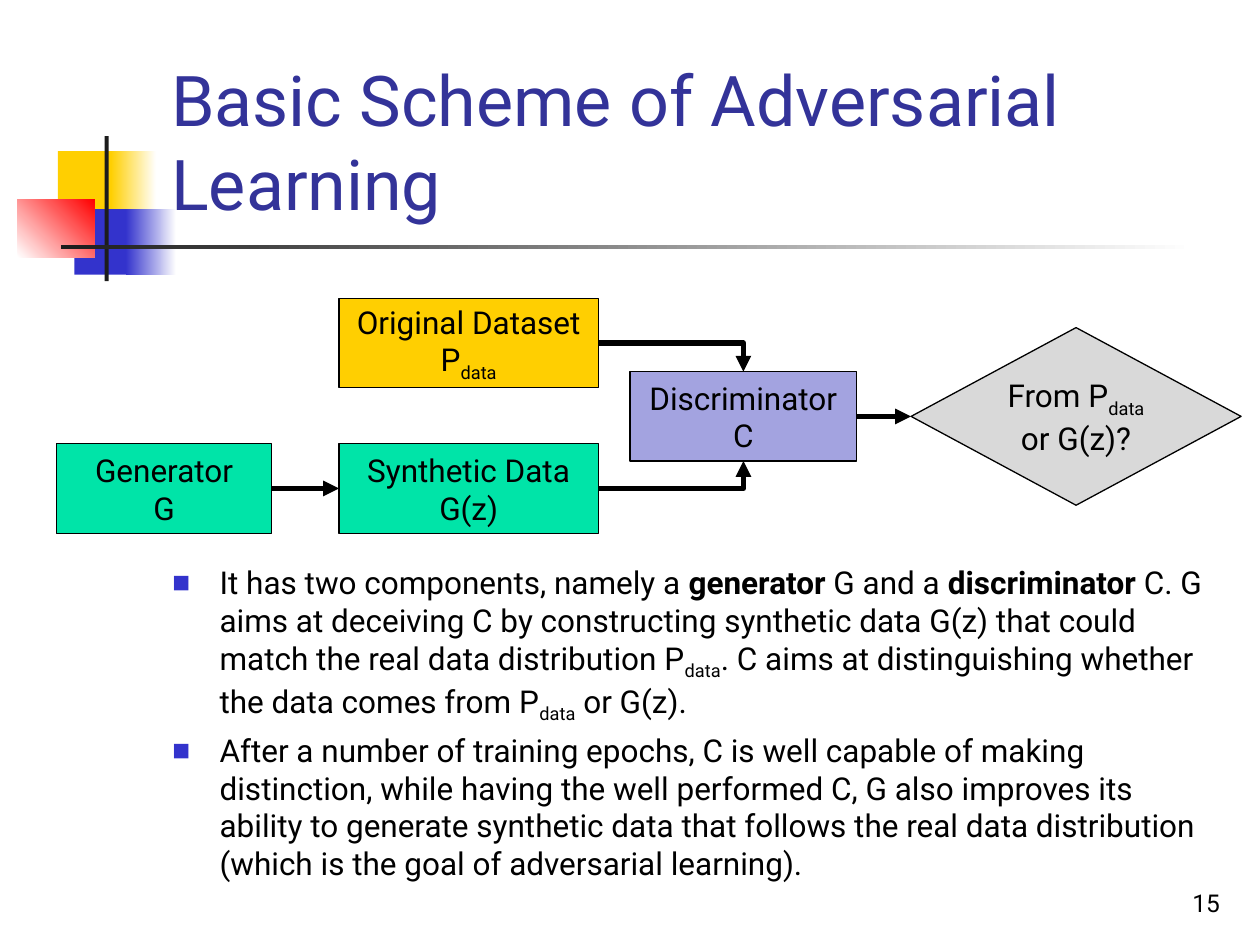
from dataclasses import dataclass
from typing import NamedTuple

from lxml.etree import SubElement
from pptx import Presentation
from pptx.dml.color import RGBColor
from pptx.enum.shapes import MSO_CONNECTOR, MSO_SHAPE
from pptx.enum.text import MSO_ANCHOR, MSO_AUTO_SIZE, PP_ALIGN
from pptx.oxml.ns import qn
from pptx.util import Pt

FONT = "Roboto"
COLORS = {
    "yellow": "FFCF01",
    "blue": "3333CC",
    "red": "FF0000",
    "white": "FFFFFF",
    "dark": "1C1C1C",
    "title": "333399",
    "black": "000000",
    "green": "00E4A8",
    "lavender": "A3A3E0",
    "gray": "D9D9D9",
}
TOP, LEFT, BOTTOM, RIGHT = range(4)


class Box(NamedTuple):
    left: float
    top: float
    width: float
    height: float


class Span(NamedTuple):
    text: str
    bold: bool = False
    subscript: bool = False


@dataclass
class Ornament:
    box: Box
    color: str
    end_color: str = ""
    angle: float = 0


@dataclass
class Node:
    name: str
    box: Box
    color: str
    lines: list[list[Span]]
    kind: MSO_SHAPE = MSO_SHAPE.RECTANGLE


@dataclass
class Arrow:
    source: str
    source_side: int
    target: str
    target_side: int
    bent: bool = False


DATA = Span("data", subscript=True)
ORNAMENTS = [
    Ornament(Box(33.1, 86.4, 34.6, 37.4), "yellow"),
    Ornament(Box(63.4, 86.4, 25.9, 37.4), "yellow", "white"),
    Ornament(Box(42.5, 119.5, 33.1, 37.4), "blue"),
    Ornament(Box(72, 119.5, 28.8, 37.4), "blue", "white"),
    Ornament(Box(10.1, 113.8, 43.9, 33.1), "white", "red", 45),
    Ornament(Box(59.8, 77.8, 2.3, 82.8), "dark"),
    Ornament(Box(34.6, 140.2, 648, 2.3), "dark", "white"),
]
NODES = [
    Node("dataset", Box(193.7, 170.4, 148.3, 51.1), "yellow",
         [[Span("Original Dataset")], [Span("P"), DATA]]),
    Node("generator", Box(32.4, 253.6, 122.8, 51.1), "green",
         [[Span("Generator")], [Span("G")]]),
    Node("synthetic", Box(193.7, 253.6, 148.3, 51.1), "green",
         [[Span("Synthetic Data")], [Span("G(z)")]]),
    Node("discriminator", Box(360, 212.4, 129.6, 51.1), "lavender",
         [[Span("Discriminator")], [Span("C")]]),
    Node("decision", Box(520.6, 187.2, 188.6, 101.5), "gray",
         [[Span("From P"), DATA, Span(" or G(z)?")]], MSO_SHAPE.DIAMOND),
]
ARROWS = [
    Arrow("generator", RIGHT, "synthetic", LEFT),
    Arrow("dataset", RIGHT, "discriminator", TOP, bent=True),
    Arrow("synthetic", RIGHT, "discriminator", BOTTOM, bent=True),
    Arrow("discriminator", RIGHT, "decision", LEFT),
]
BULLETS = [
    [
        Span("It has two components, namely a "),
        Span("generator", bold=True),
        Span(" G and a "),
        Span("discriminator", bold=True),
        Span(" C. G aims at deceiving C by constructing synthetic data G(z) "
             "that could match the real data distribution P"),
        DATA,
        Span(". C aims at distinguishing whether the data comes from P"),
        DATA,
        Span(" or G(z)."),
    ],
    [
        Span("After a number of training epochs, C is well capable of making "
             "distinction, while having the well performed C, G also improves its "
             "ability to generate synthetic data that follows the real data "
             "distribution (which is the goal of adversarial learning)."),
    ],
]


def rgb(name: str) -> RGBColor:
    return RGBColor.from_string(COLORS[name])


def lengths(box: Box) -> list[Pt]:
    return [Pt(value) for value in box]


def format_paragraph(paragraph, size: float, alignment=PP_ALIGN.LEFT, color: str = "black") -> None:
    paragraph.alignment = alignment
    paragraph.font.name = FONT
    paragraph.font.size = Pt(size)
    paragraph.font.color.rgb = rgb(color)


def add_spans(paragraph, spans: list[Span]) -> None:
    for span in spans:
        run = paragraph.add_run()
        run.text = span.text
        if span.bold:
            run.font.bold = True
        if span.subscript:
            run._r.get_or_add_rPr().set("baseline", "-25000")


def add_title(slide):
    title = slide.shapes.title
    title.left, title.top, title.width, title.height = lengths(Box(90.7, 16.6, 613.4, 115.2))
    frame = title.text_frame
    frame.text = "Basic Scheme of Adversarial Learning"
    frame.word_wrap = True
    frame.auto_size = MSO_AUTO_SIZE.NONE
    frame.vertical_anchor = MSO_ANCHOR.BOTTOM
    format_paragraph(frame.paragraphs[0], 40, color="title")
    return title


def add_ornament(slide, ornament: Ornament, title) -> None:
    shape = slide.shapes.add_shape(MSO_SHAPE.RECTANGLE, *lengths(ornament.box))
    shape.shadow.inherit = False
    shape.line.fill.background()
    if ornament.end_color:
        shape.fill.gradient()
        shape.fill.gradient_angle = ornament.angle
        for stop, color in zip(shape.fill.gradient_stops, (ornament.color, ornament.end_color)):
            stop.color.rgb = rgb(color)
    else:
        shape.fill.solid()
        shape.fill.fore_color.rgb = rgb(ornament.color)
    title.element.addprevious(shape.element)


def add_text_box(slide, box: Box, anchor=MSO_ANCHOR.TOP):
    frame = slide.shapes.add_textbox(*lengths(box)).text_frame
    frame.word_wrap = True
    frame.vertical_anchor = anchor
    return frame


def add_bullets(slide) -> None:
    frame = add_text_box(slide, Box(91.4, 318.2, 613.4, 190.1))
    for index, spans in enumerate(BULLETS):
        paragraph = frame.add_paragraph() if index else frame.paragraphs[0]
        format_paragraph(paragraph, 18)
        paragraph.space_before = Pt(3.6)
        properties = paragraph._p.get_or_add_pPr()
        properties.set("marL", str(Pt(27)))
        properties.set("indent", str(Pt(-27)))
        marker = [("buClr", {}), ("buSzPct", {"val": "60000"}),
                  ("buFont", {"typeface": FONT}), ("buChar", {"char": "■"})]
        elements = [properties.makeelement(qn(f"a:{tag}"), values) for tag, values in marker]
        SubElement(elements[0], qn("a:srgbClr"), val=COLORS["blue"])
        default_run = properties.find(qn("a:defRPr"))
        for element in elements:
            default_run.addprevious(element)
        add_spans(paragraph, spans)


def add_node(slide, node: Node):
    shape = slide.shapes.add_shape(node.kind, *lengths(node.box))
    shape.shadow.inherit = False
    shape.fill.solid()
    shape.fill.fore_color.rgb = rgb(node.color)
    shape.line.color.rgb = rgb("black")
    shape.line.width = Pt(0.75)
    frame = shape.text_frame
    frame.word_wrap = True
    frame.vertical_anchor = MSO_ANCHOR.MIDDLE
    paragraph = frame.paragraphs[0]
    format_paragraph(paragraph, 18, PP_ALIGN.CENTER)
    for index, spans in enumerate(node.lines):
        if index:
            paragraph.add_line_break()
        add_spans(paragraph, spans)
    return shape


def add_arrow(slide, arrow: Arrow, shapes: dict) -> None:
    kind = MSO_CONNECTOR.ELBOW if arrow.bent else MSO_CONNECTOR.STRAIGHT
    connector = slide.shapes.add_connector(kind, 0, 0, 0, 0)
    connector.begin_connect(shapes[arrow.source], arrow.source_side)
    connector.end_connect(shapes[arrow.target], arrow.target_side)
    connector.line.color.rgb = rgb("black")
    connector.line.width = Pt(3)
    properties = connector.element.spPr
    if arrow.bent:
        properties.find(qn("a:prstGeom")).set("prst", "bentConnector2")
    SubElement(properties.find(qn("a:ln")), qn("a:tailEnd"), type="triangle")
    SubElement(properties, qn("a:effectLst"))


def main() -> None:
    presentation = Presentation()
    presentation.slide_width, presentation.slide_height = Pt(720), Pt(540)
    slide = presentation.slides.add_slide(presentation.slide_layouts[5])
    title = add_title(slide)
    for ornament in ORNAMENTS:
        add_ornament(slide, ornament, title)
    add_bullets(slide)
    number = add_text_box(slide, Box(554.4, 491.8, 149.8, 36), MSO_ANCHOR.BOTTOM).paragraphs[0]
    format_paragraph(number, 14, PP_ALIGN.RIGHT)
    add_spans(number, [Span("15")])
    shapes = {node.name: add_node(slide, node) for node in NODES}
    for arrow in ARROWS:
        add_arrow(slide, arrow, shapes)
    presentation.save("out.pptx")


if __name__ == "__main__":
    main()
